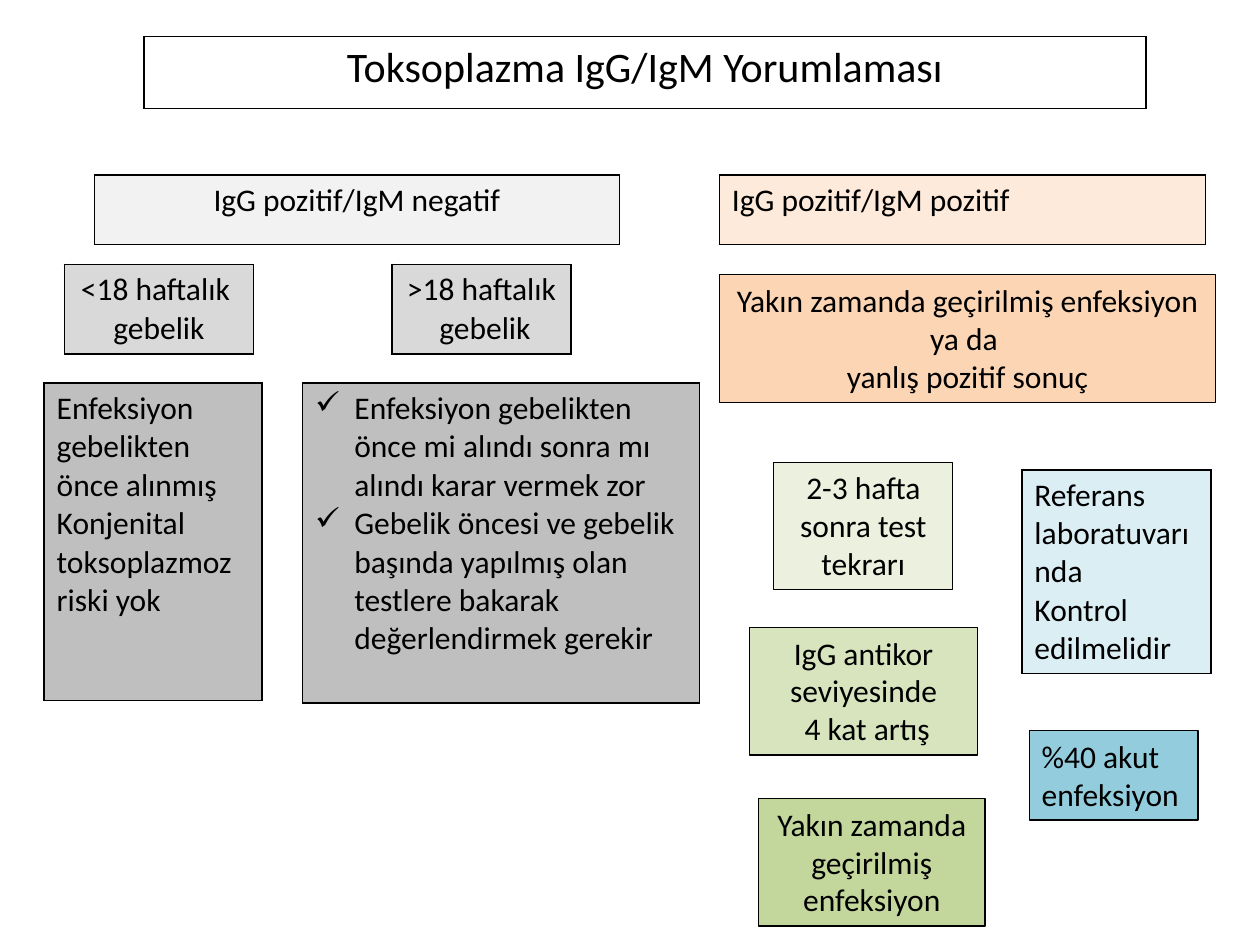
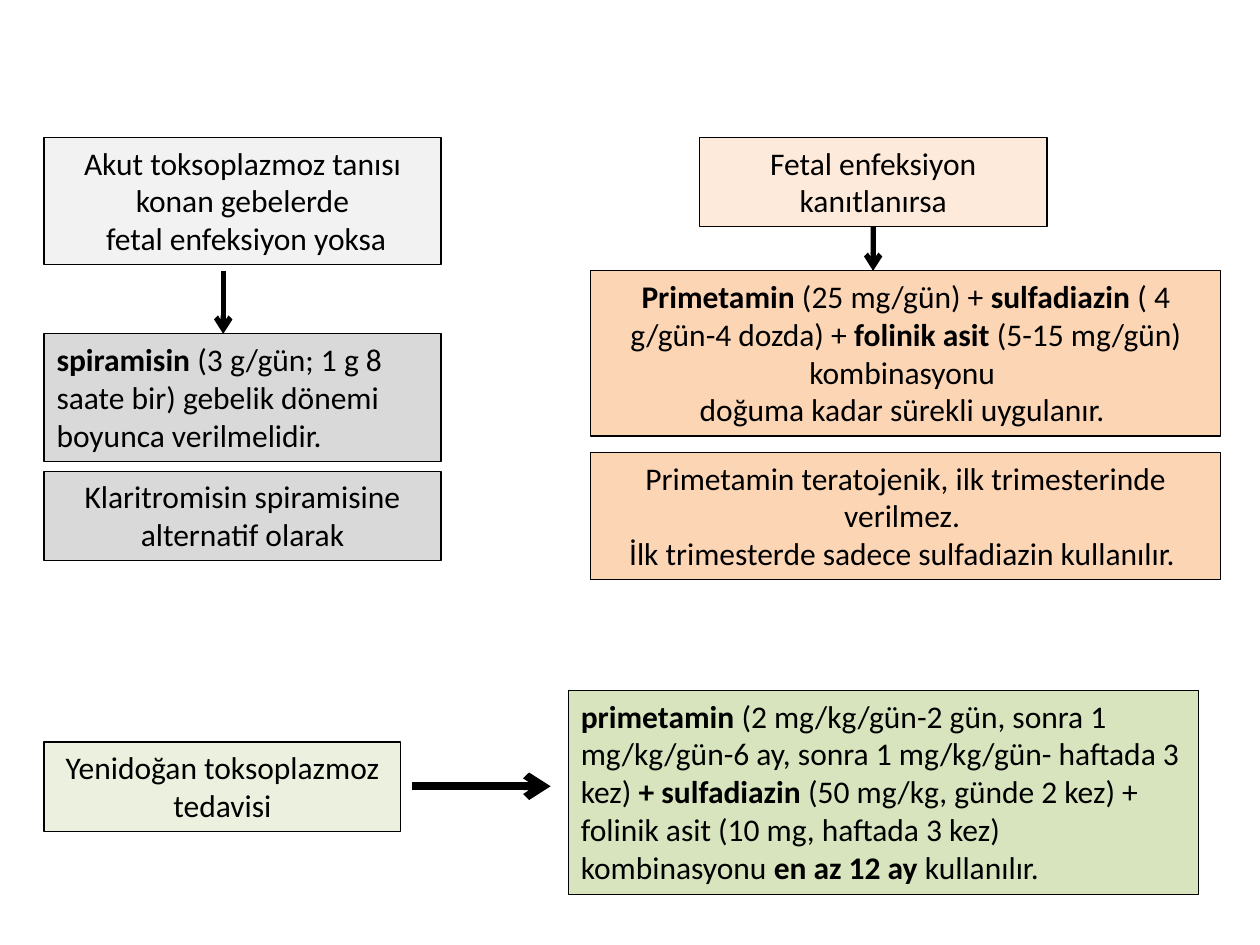
from lxml import etree
from pptx import Presentation
from pptx.dml.color import RGBColor
from pptx.enum.shapes import MSO_CONNECTOR, MSO_SHAPE
from pptx.enum.text import MSO_ANCHOR, MSO_AUTO_SIZE, PP_ALIGN
from pptx.oxml.ns import qn
from pptx.util import Cm, Pt

LEFT, CENTER = PP_ALIGN.LEFT, PP_ALIGN.CENTER
RECTANGLE = MSO_SHAPE.RECTANGLE
STRAIGHT = MSO_CONNECTOR.STRAIGHT
TOP = MSO_ANCHOR.TOP
GROW = MSO_AUTO_SIZE.SHAPE_TO_FIT_TEXT
BOTTOM_SIDE = 2

BLACK = RGBColor(0x00, 0x00, 0x00)
GRAY_PALE = RGBColor(0xF2, 0xF2, 0xF2)
GRAY_LIGHT = RGBColor(0xD9, 0xD9, 0xD9)
GRAY_MID = RGBColor(0xBF, 0xBF, 0xBF)
ORANGE_PALE = RGBColor(0xFD, 0xEA, 0xDA)
ORANGE_LIGHT = RGBColor(0xFC, 0xD5, 0xB5)
GREEN_PALE = RGBColor(0xEB, 0xF1, 0xDE)
GREEN_LIGHT = RGBColor(0xD7, 0xE4, 0xBD)
GREEN_MID = RGBColor(0xC3, 0xD6, 0x9B)
BLUE_PALE = RGBColor(0xDB, 0xEE, 0xF4)
BLUE_MID = RGBColor(0x93, 0xCD, 0xDD)

FONT = "Calibri"
BODY_SIZE, TITLE_SIZE = Pt(18), Pt(24)
BULLET_INDENT = Cm(0.79)

# Edges and heights shared by several boxes, in cm
LEFT_EDGE = 0.89
LEFT_WIDTH = 8
TREATMENT_X, TREATMENT_WIDTH = 11.91, 12.7
POSITIVE_X = 14.5
TWO_LINES, THREE_LINES = 1.8, 2.57


class Deck:
    def __init__(self):
        self.presentation = Presentation()
        self.presentation.slide_width = Cm(25.4)
        self.presentation.slide_height = Cm(19.05)
        self.slide = None

    def new_slide(self):
        self.slide = self.presentation.slides.add_slide(self.presentation.slide_layouts[6])

    def fill_text(self, frame, lines, align, size=BODY_SIZE, bullet=None):
        """Fill a text frame, one paragraph a line; **marks** enclose bold text."""
        for number, line in enumerate(lines):
            paragraph = frame.add_paragraph() if number else frame.paragraphs[0]
            paragraph.alignment = align
            if bullet:
                properties = paragraph._p.get_or_add_pPr()
                properties.set("marL", str(BULLET_INDENT))
                properties.set("indent", str(-BULLET_INDENT))
                etree.SubElement(properties, qn("a:buChar"), char=bullet)
            paragraph.font.name = FONT
            paragraph.font.size = size
            paragraph.font.color.rgb = BLACK
            for part, text in enumerate(line.split("**")):
                if text:
                    run = paragraph.add_run()
                    run.text = text
                    if part % 2:
                        run.font.bold = True

    def cell(self, x, y, width, height, fill, *lines, align=CENTER, size=BODY_SIZE, bullet=None):
        """Add a bordered table of a single cell."""
        table = self.slide.shapes.add_table(1, 1, Cm(x), Cm(y), Cm(width), Cm(height)).table
        table.first_row = table.horz_banding = False
        cell = table.cell(0, 0)
        properties = cell._tc.get_or_add_tcPr()
        for side in ("a:lnL", "a:lnR", "a:lnT", "a:lnB"):
            border = etree.SubElement(properties, qn(side), w=str(Pt(1)))
            solid = etree.SubElement(border, qn("a:solidFill"))
            etree.SubElement(solid, qn("a:srgbClr"), val=str(BLACK))
        if fill is None:
            cell.fill.background()
        else:
            cell.fill.solid()
            cell.fill.fore_color.rgb = fill
        self.fill_text(cell.text_frame, lines, align, size, bullet)

    def box(self, x, y, width, height, fill, *lines, align=CENTER):
        box = self.slide.shapes.add_shape(RECTANGLE, Cm(x), Cm(y), Cm(width), Cm(height))
        box.shadow.inherit = False
        box.fill.solid()
        box.fill.fore_color.rgb = fill
        box.line.color.rgb = BLACK
        box.line.width = Pt(0.75)
        frame = box.text_frame
        frame.word_wrap = True
        frame.auto_size = GROW
        frame.vertical_anchor = TOP
        self.fill_text(frame, lines, align)
        return box

    def arrow(self, x1, y1, x2, y2, weight=3):
        arrow = self.slide.shapes.add_connector(STRAIGHT, Cm(x1), Cm(y1), Cm(x2), Cm(y2))
        arrow.line.color.rgb = BLACK
        arrow.line.width = Pt(weight)
        outline = arrow._element.spPr.find(qn("a:ln"))
        etree.SubElement(outline, qn("a:tailEnd"), type="arrow")
        etree.SubElement(arrow._element.spPr, qn("a:effectLst"))
        return arrow


def add_interpretation(deck):
    deck.new_slide()
    deck.cell(2.9, 0.74, 20.2, 1.45, None, "Toksoplazma IgG/IgM Yorumlaması", size=TITLE_SIZE)

    heading_y, heading_height = 3.53, 1.4
    deck.cell(1.9, heading_y, 10.59, heading_height, GRAY_PALE, "IgG pozitif/IgM negatif")
    deck.cell(POSITIVE_X, heading_y, 9.8, heading_height, ORANGE_PALE,
              "IgG pozitif/IgM pozitif", align=LEFT)

    week_y, finding_y = 5.33, 7.72
    deck.cell(1.3, week_y, 3.81, TWO_LINES, GRAY_LIGHT, "<18 haftalık ", "gebelik")
    deck.cell(7.9, week_y, 3.61, TWO_LINES, GRAY_LIGHT, ">18 haftalık", " gebelik")
    deck.cell(LEFT_EDGE, finding_y, 4.39, 6.4, GRAY_MID,
              "Enfeksiyon gebelikten önce alınmış",
              "Konjenital toksoplazmoz riski yok", align=LEFT)
    deck.cell(6.1, finding_y, LEFT_WIDTH, 6.45, GRAY_MID,
              "Enfeksiyon gebelikten önce mi alındı sonra mı alındı karar vermek zor",
              "Gebelik öncesi ve gebelik başında yapılmış olan testlere bakarak "
              "değerlendirmek gerekir", align=LEFT, bullet="✓")

    deck.box(POSITIVE_X, 5.54, 10.01, THREE_LINES, ORANGE_LIGHT,
             "Yakın zamanda geçirilmiş enfeksiyon ya da ", "yanlış pozitif sonuç")
    deck.box(15.6, 9.32, 3.61, THREE_LINES, GREEN_PALE, "2-3 hafta sonra test tekrarı")
    deck.box(15.11, 12.65, 4.6, THREE_LINES, GREEN_LIGHT,
             "IgG antikor seviyesinde", " 4 kat artış")
    deck.box(15.29, 16.1, 4.57, THREE_LINES, GREEN_MID, "Yakın zamanda geçirilmiş enfeksiyon")
    deck.cell(20.6, 9.47, 3.81, 4.11, BLUE_PALE,
              "Referans laboratuvarında", "Kontrol edilmelidir", align=LEFT)
    deck.box(20.75, 14.73, 3.4, TWO_LINES, BLUE_MID, "%40 akut enfeksiyon", align=LEFT)


def add_treatment(deck):
    deck.new_slide()
    condition_y, spiramycin_y, combination_y = 2.77, 6.73, 5.46

    deck.box(LEFT_EDGE, condition_y, LEFT_WIDTH, THREE_LINES, GRAY_PALE,
             "Akut toksoplazmoz tanısı konan gebelerde", " fetal enfeksiyon yoksa")
    deck.box(LEFT_EDGE, spiramycin_y, LEFT_WIDTH, THREE_LINES, GRAY_LIGHT,
             "**spiramisin** (3 g/gün; 1 g 8 saate bir) gebelik dönemi boyunca verilmelidir.",
             align=LEFT)
    deck.box(LEFT_EDGE, 9.5, LEFT_WIDTH, TWO_LINES, GRAY_LIGHT,
             "Klaritromisin spiramisine alternatif olarak")
    deck.arrow(4.5, 5.46, 4.5, spiramycin_y)

    fetal_infection = deck.box(14.1, condition_y, 7.01, TWO_LINES, ORANGE_PALE,
                               "Fetal enfeksiyon", " kanıtlanırsa ")
    deck.box(TREATMENT_X, combination_y, TREATMENT_WIDTH, 3.33, ORANGE_LIGHT,
             "**Primetamin** (25 mg/gün) + **sulfadiazin** ( 4 g/gün-4 dozda) + "
             "**folinik asit **(5-15 mg/gün) kombinasyonu ",
             "doğuma kadar sürekli uygulanır. ")
    deck.box(TREATMENT_X, 9.12, TREATMENT_WIDTH, THREE_LINES, ORANGE_LIGHT,
             "Primetamin teratojenik, ilk trimesterinde verilmez. ",
             "İlk trimesterde sadece sulfadiazin kullanılır. ")
    fetal_arrow = deck.arrow(17.6, condition_y + TWO_LINES, 17.6, combination_y)
    fetal_arrow.begin_connect(fetal_infection, BOTTOM_SIDE)

    deck.box(LEFT_EDGE, 14.96, 7.19, TWO_LINES, GREEN_PALE, "Yenidoğan toksoplazmoz tedavisi")
    deck.box(11.46, 13.92, TREATMENT_WIDTH, 4.11, GREEN_LIGHT,
             "**primetamin **(2 mg/kg/gün-2 gün, sonra 1 mg/kg/gün-6 ay, sonra "
             "1 mg/kg/gün- haftada 3 kez) **+ sulfadiazin **(50 mg/kg, günde 2 kez) + "
             "folinik asit (10 mg, haftada 3 kez) kombinasyonu **en az 12 ay **kullanılır.",
             align=LEFT)
    deck.arrow(8.31, 15.85, 11.1, 15.85, weight=4.5)


def main():
    deck = Deck()
    add_interpretation(deck)
    add_treatment(deck)
    deck.presentation.save("out.pptx")


if __name__ == "__main__":
    main()
